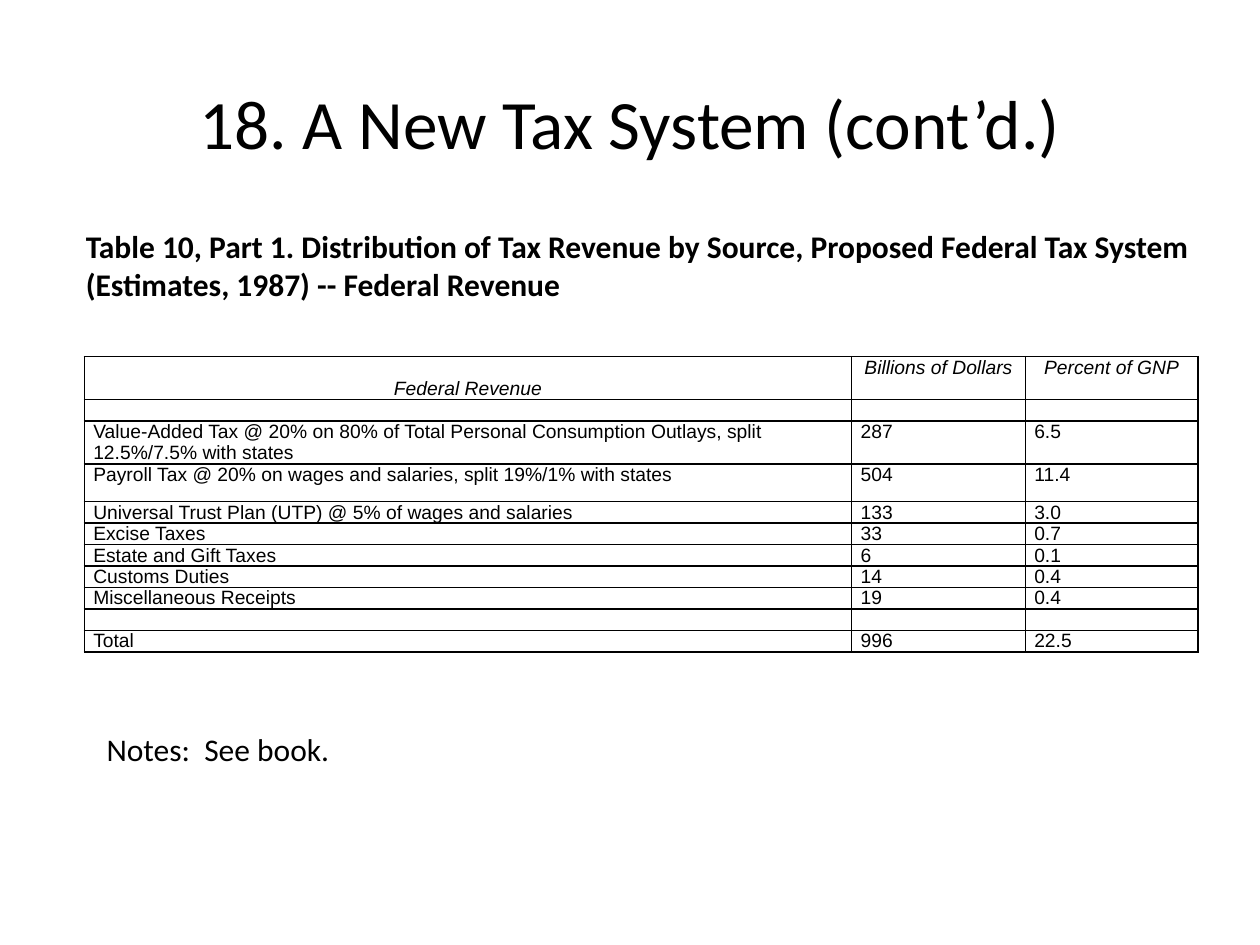
from lxml.etree import SubElement
from pptx import Presentation
from pptx.dml.color import RGBColor
from pptx.enum.text import MSO_ANCHOR, MSO_AUTO_SIZE, PP_ALIGN
from pptx.oxml.ns import qn
from pptx.util import Cm, Pt

BLACK = "000000"
CELL_SIZE = Pt(11)
COL_WIDTHS = [15.47, 3.5, 3.48]
ROW_HEIGHTS = [0.86, 0.43, 0.87, 0.76] + [0.43] * 7
ROWS = [
    ("Federal Revenue", "Billions of Dollars", "Percent of GNP"),
    ("", "", ""),
    ("Value-Added Tax @ 20% on 80% of Total Personal Consumption Outlays, "
     "split 12.5%/7.5% with states", "287", "6.5"),
    ("Payroll Tax @ 20% on wages and salaries, split 19%/1% with states", "504", "11.4"),
    ("Universal Trust Plan (UTP) @ 5% of wages and salaries", "133", "3.0"),
    ("Excise Taxes", "33", "0.7"),
    ("Estate and Gift Taxes", "6", "0.1"),
    ("Customs Duties", "14", "0.4"),
    ("Miscellaneous Receipts", "19", "0.4"),
    ("", "", ""),
    ("Total", "996", "22.5"),
]


def rgb(value):
    """Return the colour for a hex string."""
    return RGBColor.from_string(value)


def set_attrs(obj, values):
    """Set each attribute of obj from a dict."""
    for name, value in values.items():
        setattr(obj, name, value)


def write(p, text, **font):
    """Write one black run into a paragraph."""
    r = p.add_run()
    r.text = text
    set_attrs(r.font, font)
    r.font.color.rgb = rgb(BLACK)


def place(sp, left, top, width, height):
    """Place a shape, with lengths in centimetres."""
    box = dict(left=left, top=top, width=width, height=height)
    set_attrs(sp, {name: Cm(value) for name, value in box.items()})


def add_title(s, text):
    """Move and format the title placeholder."""
    sp = s.shapes.title
    place(sp, 1.27, 1.47, 22.86, 1.98)
    tf = sp.text_frame
    set_attrs(tf, dict(auto_size=MSO_AUTO_SIZE.NONE, word_wrap=True,
                       vertical_anchor=MSO_ANCHOR.MIDDLE))
    p = tf.paragraphs[0]
    p.alignment = PP_ALIGN.CENTER
    write(p, text, name="Calibri", size=Pt(39.6))


def add_text(s, box, text, bold=False):
    """Add a wrapped text box."""
    tf = s.shapes.add_textbox(*map(Cm, box)).text_frame
    set_attrs(tf, dict(word_wrap=True, auto_size=MSO_AUTO_SIZE.SHAPE_TO_FIT_TEXT))
    write(tf.paragraphs[0], text, name="Calibri", size=Pt(18), bold=bold)


def add_borders(cell):
    """Draw a thin black line on all four sides of a cell."""
    tc_pr = cell._tc.get_or_add_tcPr()
    for i, side in enumerate(("lnL", "lnR", "lnT", "lnB")):
        ln = tc_pr.makeelement(qn(f"a:{side}"), {"w": str(Pt(1))})
        fill = SubElement(ln, qn("a:solidFill"))
        SubElement(fill, qn("a:srgbClr"), val=BLACK)
        tc_pr.insert(i, ln)


def fill_cell(cell, text, header, anchor):
    """Format a cell and write its text."""
    set_attrs(cell, dict(margin_left=Cm(0.18), margin_right=Cm(0.18), margin_top=0,
                         margin_bottom=0, vertical_anchor=anchor))
    cell.fill.background()
    add_borders(cell)
    p = cell.text_frame.paragraphs[0]
    if header:
        p.alignment = PP_ALIGN.CENTER
    if text:
        write(p, text, name="Arial", size=CELL_SIZE, bold=False, italic=header)
    else:
        end = SubElement(p._p, qn("a:endParaRPr"), sz=str(CELL_SIZE.centipoints))
        SubElement(end, qn("a:latin"), typeface="Arial")


def add_revenue_table(s):
    """Add the table of federal revenue."""
    box = map(Cm, (1.7, 7.19, sum(COL_WIDTHS), sum(ROW_HEIGHTS)))
    table = s.shapes.add_table(len(ROWS), len(COL_WIDTHS), *box).table
    set_attrs(table, dict(first_row=False, horz_banding=False))
    for col, width in zip(table.columns, COL_WIDTHS):
        col.width = Cm(width)
    for i, (row, height, texts) in enumerate(zip(table.rows, ROW_HEIGHTS, ROWS)):
        row.height = Cm(height)
        for j, (cell, text) in enumerate(zip(row.cells, texts)):
            anchor = MSO_ANCHOR.BOTTOM if i == j == 0 else MSO_ANCHOR.TOP
            fill_cell(cell, text, i == 0, anchor)


def main():
    """Build the slide and save it."""
    prs = Presentation()
    set_attrs(prs, dict(slide_width=Cm(25.4), slide_height=Cm(19.05)))
    s = prs.slides.add_slide(prs.slide_layouts[5])
    add_title(s, "18. A New Tax System (cont’d.)")
    add_revenue_table(s)
    add_text(s, (1.48, 4.45, 22.86, 1.8),
             "Table 10, Part 1. Distribution of Tax Revenue by Source, Proposed Federal "
             "Tax System (Estimates, 1987) -- Federal Revenue", bold=True)
    add_text(s, (1.9, 14.6, 22.44, 1.03), "Notes:  See book.")
    prs.save("out.pptx")


if __name__ == "__main__":
    main()
